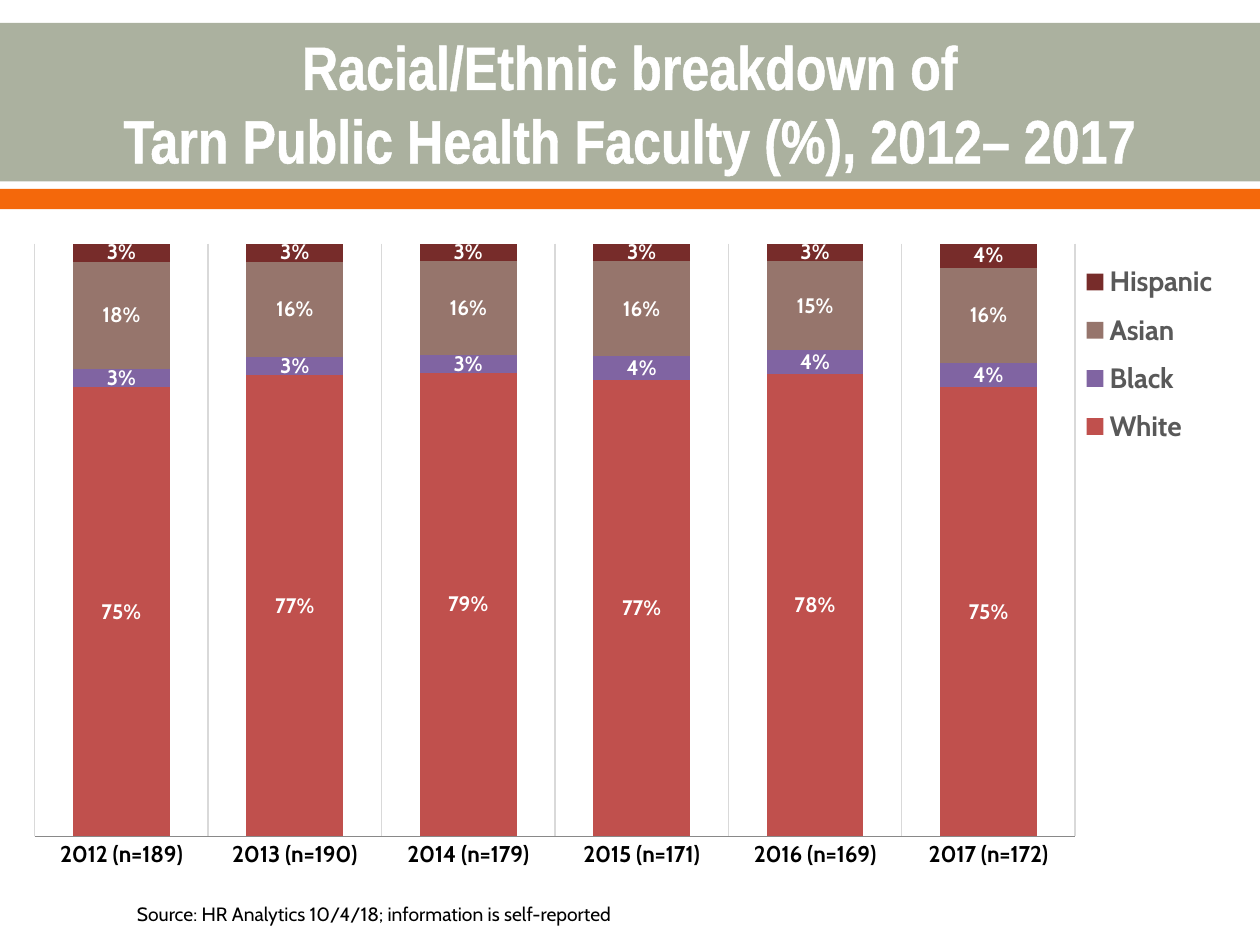
from lxml import etree
from pptx import Presentation
from pptx.chart.data import CategoryChartData
from pptx.dml.color import RGBColor
from pptx.enum.chart import (XL_CHART_TYPE, XL_LABEL_POSITION,
                             XL_LEGEND_POSITION, XL_TICK_MARK)
from pptx.enum.shapes import MSO_SHAPE
from pptx.enum.text import MSO_ANCHOR, MSO_AUTO_SIZE, PP_ALIGN
from pptx.oxml import parse_xml
from pptx.oxml.ns import nsdecls, qn
from pptx.util import Cm, Pt

STACKED = XL_CHART_TYPE.COLUMN_STACKED_100
CENTER_LABEL = XL_LABEL_POSITION.CENTER
RIGHT = XL_LEGEND_POSITION.RIGHT
NO_TICK = XL_TICK_MARK.NONE
RECT = MSO_SHAPE.RECTANGLE
MIDDLE = MSO_ANCHOR.MIDDLE
NO_FIT, GROW = MSO_AUTO_SIZE.NONE, MSO_AUTO_SIZE.SHAPE_TO_FIT_TEXT
CENTER, LEFT = PP_ALIGN.CENTER, PP_ALIGN.LEFT

WHITE = RGBColor(0xFF, 0xFF, 0xFF)
BLACK = RGBColor(0x00, 0x00, 0x00)
SAGE = RGBColor(0xAB, 0xB1, 0x9F)
ORANGE = RGBColor(0xF4, 0x68, 0x0B)
GRID = RGBColor(0xD9, 0xD9, 0xD9)
AXIS = RGBColor(0x89, 0x89, 0x89)
LEGEND = RGBColor(0x59, 0x59, 0x59)
RED = RGBColor(0xC0, 0x50, 0x4D)
PURPLE = RGBColor(0x80, 0x64, 0xA2)
TAUPE = RGBColor(0x96, 0x75, 0x6C)
MAROON = RGBColor(0x77, 0x2C, 0x2A)

FACULTY = {2012: 189, 2013: 190, 2014: 179, 2015: 171, 2016: 169, 2017: 172}
GROUPS = [
    ("White", RED, (0.75, 0.77, 0.79, 0.77, 0.78, 0.75)),
    ("Black", PURPLE, (0.03, 0.03, 0.03, 0.04, 0.04, 0.04)),
    ("Asian", TAUPE, (0.18, 0.16, 0.16, 0.16, 0.15, 0.16)),
    ("Hispanic", MAROON, (0.03, 0.03, 0.03, 0.03, 0.03, 0.04)),
]


def set_font(font, name, size, color, bold=False):
    """Apply the given format to a font."""
    font.name, font.size, font.bold = name, Pt(size), bold
    font.color.rgb = color


def write(tf, text, align=LEFT, fit=NO_FIT, **fmt):
    """Fill a text frame with one formatted paragraph."""
    tf.word_wrap = True
    tf.auto_size = fit
    p = tf.paragraphs[0]
    p.text = text
    p.alignment = align
    for r in p.runs:
        set_font(r.font, **fmt)
    return p


def manual_layout(x, y, w, h, inner=False):
    """Return a chart layout element given as fractions of the chart."""
    layout = parse_xml(f"<c:layout {nsdecls('c')}><c:manualLayout/></c:layout>")
    target = [("layoutTarget", "inner")] if inner else []
    for tag, val in target + [("xMode", "edge"), ("yMode", "edge"),
                              ("x", x), ("y", y), ("w", w), ("h", h)]:
        etree.SubElement(layout[0], qn(f"c:{tag}")).set("val", str(val))
    return layout


class Deck:
    """Hold the style and the current slide."""

    head_font = "Arial Narrow"
    body_font = "Cabin"

    def __init__(self, prs):
        """Start a title-only slide."""
        self.slide = prs.slides.add_slide(prs.slide_layouts[5])

    def band(self, top, height, color):
        """Draw a full-width colour band."""
        sp = self.slide.shapes.add_shape(RECT, 0, Cm(top), Cm(25.4), Cm(height))
        sp.shadow.inherit = False
        sp.fill.solid()
        sp.fill.fore_color.rgb = color
        sp.line.fill.background()

    def title(self, text, left, top, width, height):
        """Place the outlined title in front of the bands."""
        sp = self.slide.shapes.title
        sp.left, sp.top, sp.width, sp.height = map(Cm, (left, top, width, height))
        sp.text_frame.vertical_anchor = MIDDLE
        p = write(sp.text_frame, text, CENTER, name=self.head_font, size=35,
                  color=WHITE, bold=True)
        for r in p.runs:
            r.font._element.insert(0, parse_xml(
                f'<a:ln {nsdecls("a")} w="{Pt(1.1)}"><a:solidFill>'
                f'<a:srgbClr val="{WHITE}"/></a:solidFill></a:ln>'))
        self.slide.shapes._spTree.append(sp._element)

    def note(self, text, left, top, width, height):
        """Add a small text box."""
        sp = self.slide.shapes.add_textbox(*map(Cm, (left, top, width, height)))
        write(sp.text_frame, text, fit=GROW, name=self.body_font, size=11, color=BLACK)

    def stacked_chart(self, cats, groups, left, top, width, height):
        """Add a 100% stacked column chart with labels and legend."""
        data = CategoryChartData(number_format="0%")
        data.categories = cats
        for name, _, vals in groups:
            data.add_series(name, vals)
        box = map(Cm, (left, top, width, height))
        chart = self.slide.shapes.add_chart(STACKED, *box, data).chart
        set_font(chart.font, self.body_font, 10, BLACK)
        chart.has_title = False
        self.axes(chart)
        self.legend(chart)
        plot = chart.plots[0]
        plot.gap_width, plot.overlap = 79, 100
        plot.vary_by_categories = False
        for series, (_, color, _) in zip(plot.series, groups):
            series.format.fill.solid()
            series.format.fill.fore_color.rgb = color
            labels = series.data_labels
            labels.show_value = True
            labels.position = CENTER_LABEL
            labels.number_format, labels.number_format_is_linked = "0%", False
            set_font(labels.font, self.body_font, 12, WHITE, True)

    def axes(self, chart):
        """Format the axes and the plot area."""
        axis = chart.category_axis
        axis.major_tick_mark = axis.minor_tick_mark = NO_TICK
        set_font(axis.tick_labels.font, self.body_font, 13, BLACK, True)
        axis.has_major_gridlines = True
        for line, color in ((axis.format.line, AXIS),
                            (axis.major_gridlines.format.line, GRID)):
            line.color.rgb, line.width = color, Pt(0.75)
        chart.value_axis.visible = False
        chart.value_axis.has_major_gridlines = False
        chart.value_axis.maximum_scale = 1
        area = chart._chartSpace.chart.plotArea
        for old in area.findall(qn("c:layout")):
            area.remove(old)
        area.insert(0, manual_layout(0.02, 0.02, 0.84, 0.91, inner=True))

    def legend(self, chart):
        """Format the legend to the right of the plot."""
        chart.has_legend = True
        legend = chart.legend
        legend.position = RIGHT
        legend.include_in_layout = False
        set_font(legend.font, self.body_font, 16, LEGEND, True)
        el = legend._element
        for old in el.findall(qn("c:layout")):
            el.remove(old)
        el.find(qn("c:legendPos")).addnext(manual_layout(0.85, 0.03, 0.14, 0.32))


def main():
    """Build the faculty breakdown slide."""
    prs = Presentation()
    prs.slide_width, prs.slide_height = Cm(25.4), Cm(19.05)
    deck = Deck(prs)
    deck.band(0.46, 3.2, SAGE)
    deck.band(3.81, 0.41, ORANGE)
    deck.title("Racial/Ethnic breakdown of\vTarn Public Health Faculty (%), 2012– 2017",
               0.64, 0.51, 24.13, 3.1)
    cats = [f"{year} (n={n})" for year, n in FACULTY.items()]
    deck.stacked_chart(cats, GROUPS, 0.2, 4.65, 24.97, 13.13)
    deck.note("Source: HR Analytics 10/4/18; information is self-reported",
              2.51, 18.06, 18.44, 0.74)
    prs.save("out.pptx")


if __name__ == "__main__":
    main()
